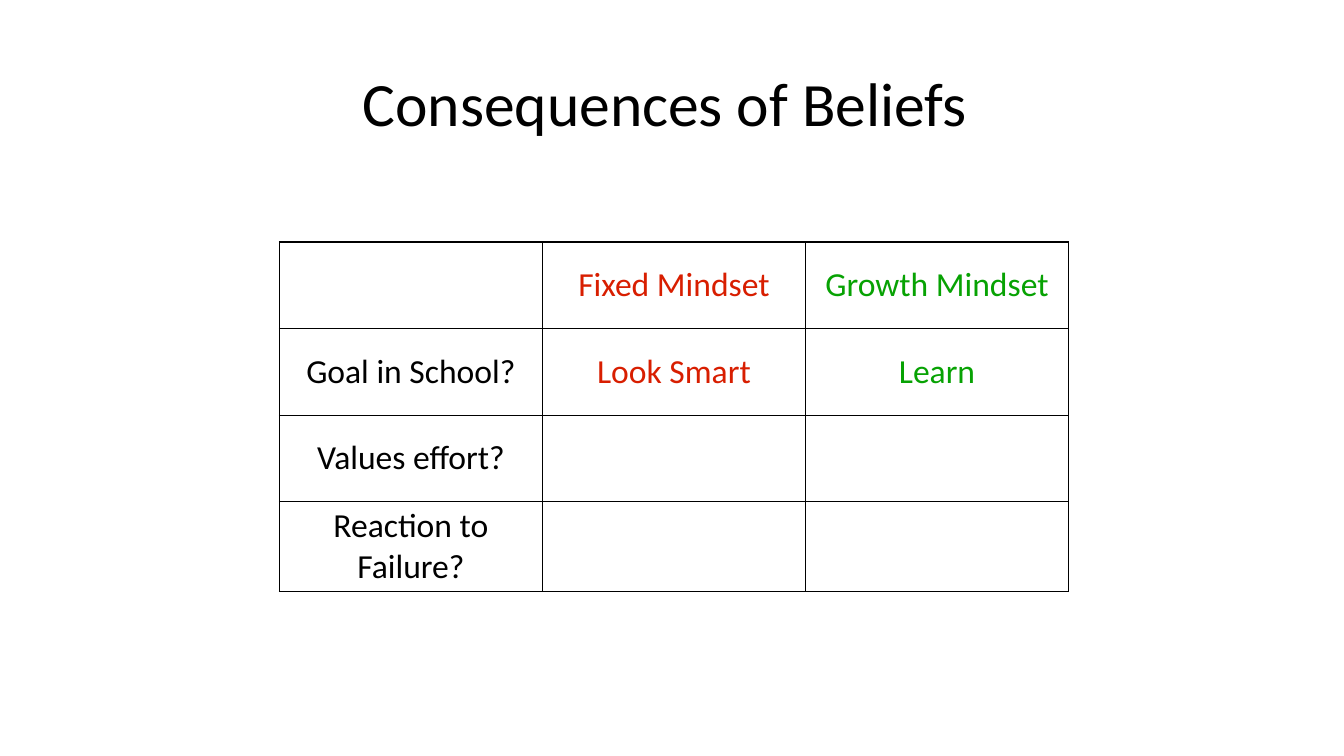
from lxml.etree import SubElement
from pptx import Presentation
from pptx.dml.color import RGBColor
from pptx.enum.text import MSO_ANCHOR as Anchor, PP_ALIGN as Align
from pptx.oxml.ns import qn
from pptx.util import Cm, Pt

COLORS = {"black": "000000", "fixed": "D81E00", "growth": "07A203"}
COLUMN_COLORS = ["black", "fixed", "growth"]
ROWS = [
    ["", "Fixed Mindset", "Growth Mindset"],
    ["Goal in School?", "Look Smart", "Learn"],
    ["Values effort?", "", ""],
    ["Reaction to Failure?", "", ""],
]
COLUMN_WIDTH = Cm(6.63)
ROW_HEIGHTS = [Cm(2.18), Cm(2.18), Cm(2.18), Cm(2.26)]


def write_text(frame, text, size=24, color="black", font="Calibri", align=Align.CENTER):
    paragraph = frame.paragraphs[0]
    paragraph.alignment = align
    paragraph.font.size = Pt(size)
    if text:
        run = paragraph.add_run()
        run.text = text
        run.font.name = font
        run.font.size = Pt(size)
        run.font.bold = False
        run.font.color.rgb = RGBColor.from_string(COLORS[color])


def add_borders(cell, color="black", width=1):
    properties = cell._tc.get_or_add_tcPr()
    for side in ("a:lnL", "a:lnR", "a:lnT", "a:lnB"):
        line = SubElement(properties, qn(side), w=str(Pt(width)))
        fill = SubElement(line, qn("a:solidFill"))
        SubElement(fill, qn("a:srgbClr"), val=COLORS[color])


def add_title(slide, text):
    title = slide.shapes.title
    title.left, title.top, title.width, title.height = Cm(5.94), Cm(0.18), Cm(21.64), Cm(4.78)
    frame = title.text_frame
    frame.margin_left = frame.margin_top = frame.margin_right = frame.margin_bottom = 0
    frame.vertical_anchor = Anchor.MIDDLE
    write_text(frame, text, size=44)


def add_mindset_table(slide):
    table = slide.shapes.add_table(
        len(ROWS), len(COLUMN_COLORS), Cm(7.04), Cm(6.1),
        COLUMN_WIDTH * len(COLUMN_COLORS), sum(ROW_HEIGHTS)).table
    table.first_row = table.horz_banding = False
    for column in table.columns:
        column.width = COLUMN_WIDTH
    for row, height, texts in zip(table.rows, ROW_HEIGHTS, ROWS):
        row.height = height
        for cell, text, color in zip(row.cells, texts, COLUMN_COLORS):
            cell.margin_left = cell.margin_top = cell.margin_right = cell.margin_bottom = Cm(0.1)
            cell.vertical_anchor = Anchor.MIDDLE
            write_text(cell.text_frame, text, color=color)
            # Borders must precede the fill in the cell properties
            add_borders(cell)
            cell.fill.background()


def main():
    presentation = Presentation()
    presentation.slide_width, presentation.slide_height = Cm(33.87), Cm(19.05)
    # Layout with a title only
    slide = presentation.slides.add_slide(presentation.slide_layouts[5])
    add_mindset_table(slide)
    add_title(slide, "Consequences of Beliefs")
    presentation.save("out.pptx")


if __name__ == "__main__":
    main()
